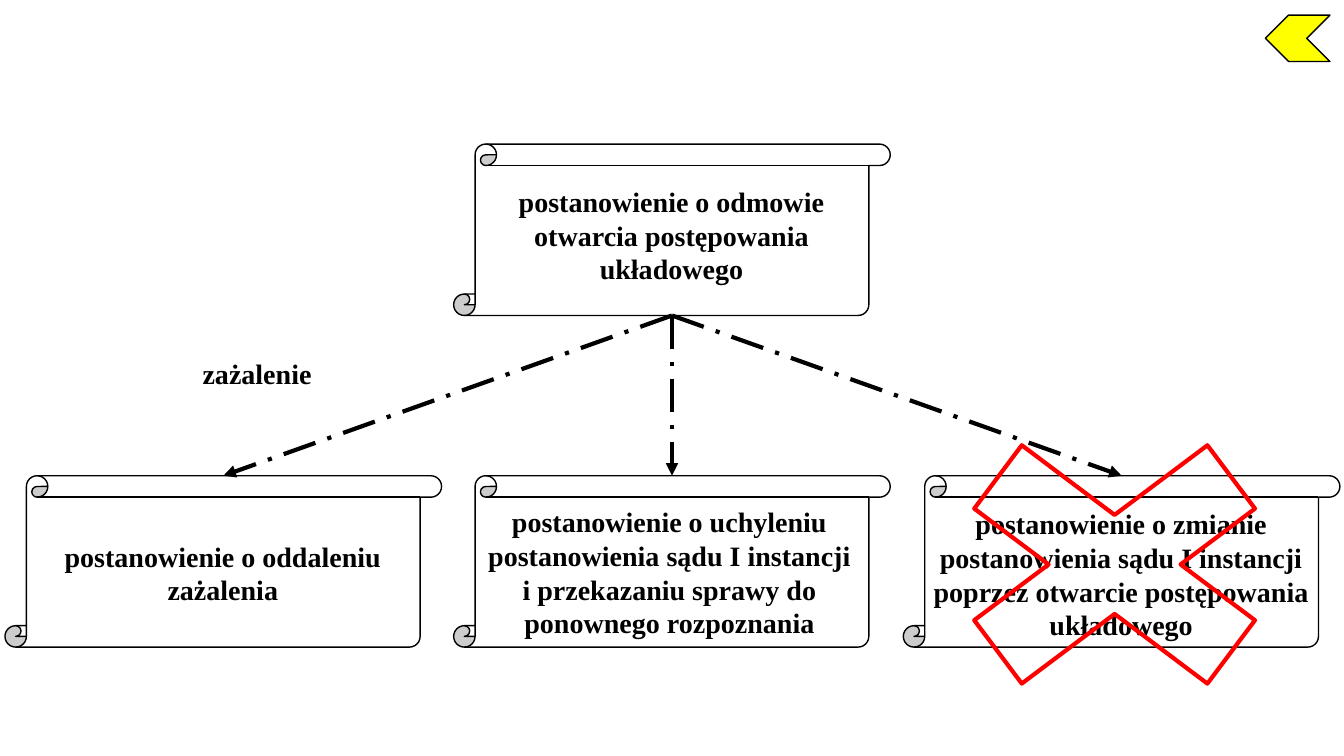
from pptx import Presentation
from pptx.dml.color import RGBColor
from pptx.enum.dml import MSO_LINE
from pptx.enum.shapes import MSO_CONNECTOR, MSO_SHAPE
from pptx.enum.text import MSO_AUTO_SIZE, PP_ALIGN
from pptx.oxml.ns import qn
from pptx.util import Inches, Pt
from lxml import etree

COLORS = {"black": "000000", "white": "FFFFFF", "yellow": "FFFF00", "red": "FF0000"}

prs = Presentation()
prs.slide_width, prs.slide_height = Inches(13.33), Inches(7.5)
s = prs.slides.add_slide(prs.slide_layouts[6])


def add_text(text, x, y, w, h, size=20, color="black", bold=True):
    tf = s.shapes.add_textbox(Inches(x), Inches(y), Inches(w), Inches(h)).text_frame
    tf.word_wrap = True
    tf.auto_size = MSO_AUTO_SIZE.SHAPE_TO_FIT_TEXT
    tf.text = text
    for p in tf.paragraphs:
        p.alignment = PP_ALIGN.CENTER
        for r in p.runs:
            r.font.name = "Times New Roman"
            r.font.size = Pt(size)
            r.font.bold = bold
            r.font.color.rgb = RGBColor.from_string(COLORS[color])


def add_figure(kind, x, y, w, h, fill="white", line="black", width=1):
    sp = s.shapes.add_shape(kind, Inches(x), Inches(y), Inches(w), Inches(h))
    sp.shadow.inherit = False
    if fill:
        sp.fill.solid()
        sp.fill.fore_color.rgb = RGBColor.from_string(COLORS[fill])
    else:
        sp.fill.background()
    sp.line.color.rgb = RGBColor.from_string(COLORS[line])
    sp.line.width = Pt(width)
    return sp


back = add_figure(MSO_SHAPE.CHEVRON, 12.55, 0.15, 0.64, 0.46, fill="yellow")
back.rotation = 180

scroll_w, scroll_h = 4.33, 1.7
decision = add_figure(MSO_SHAPE.VERTICAL_SCROLL, 4.5, 1.43, scroll_w, scroll_h)
outcomes = [add_figure(MSO_SHAPE.VERTICAL_SCROLL, x, 4.72, scroll_w, scroll_h)
            for x in (0.05, 4.5, 8.96)]

add_text("zażalenie", 1.91, 3.49, 1.28, 0.44)
add_text("postanowienie o oddaleniu zażalenia", 0.45, 5.3, 3.52, 0.77)
add_text("postanowienie o uchyleniu postanowienia sądu I instancji\n"
         "i przekazaniu sprawy do ponownego rozpoznania", 4.45, 4.96, 4.38, 1.45)
add_text("postanowienie o zmianie postanowienia sądu I instancji "
         "poprzez otwarcie postępowania układowego", 8.93, 4.98, 4.38, 1.45)

for outcome in outcomes:
    arrow = s.shapes.add_connector(MSO_CONNECTOR.STRAIGHT, 0, 0, 0, 0)
    arrow.begin_connect(decision, 2)
    arrow.end_connect(outcome, 0)
    arrow.line.color.rgb = RGBColor.from_string(COLORS["black"])
    arrow.line.width = Pt(3)
    arrow.line.dash_style = MSO_LINE.LONG_DASH_DOT
    etree.SubElement(arrow.line._get_or_add_ln(), qn("a:tailEnd"), type="triangle")
    etree.SubElement(arrow._element.spPr, qn("a:effectLst"))

add_text("postanowienie o odmowie otwarcia postępowania układowego", 4.9, 1.78, 3.52, 1.11)
add_figure(MSO_SHAPE.MATH_MULTIPLY, 8.83, 3.93, 4.45, 3.34, fill=None, line="red", width=3)

prs.save("out.pptx")
